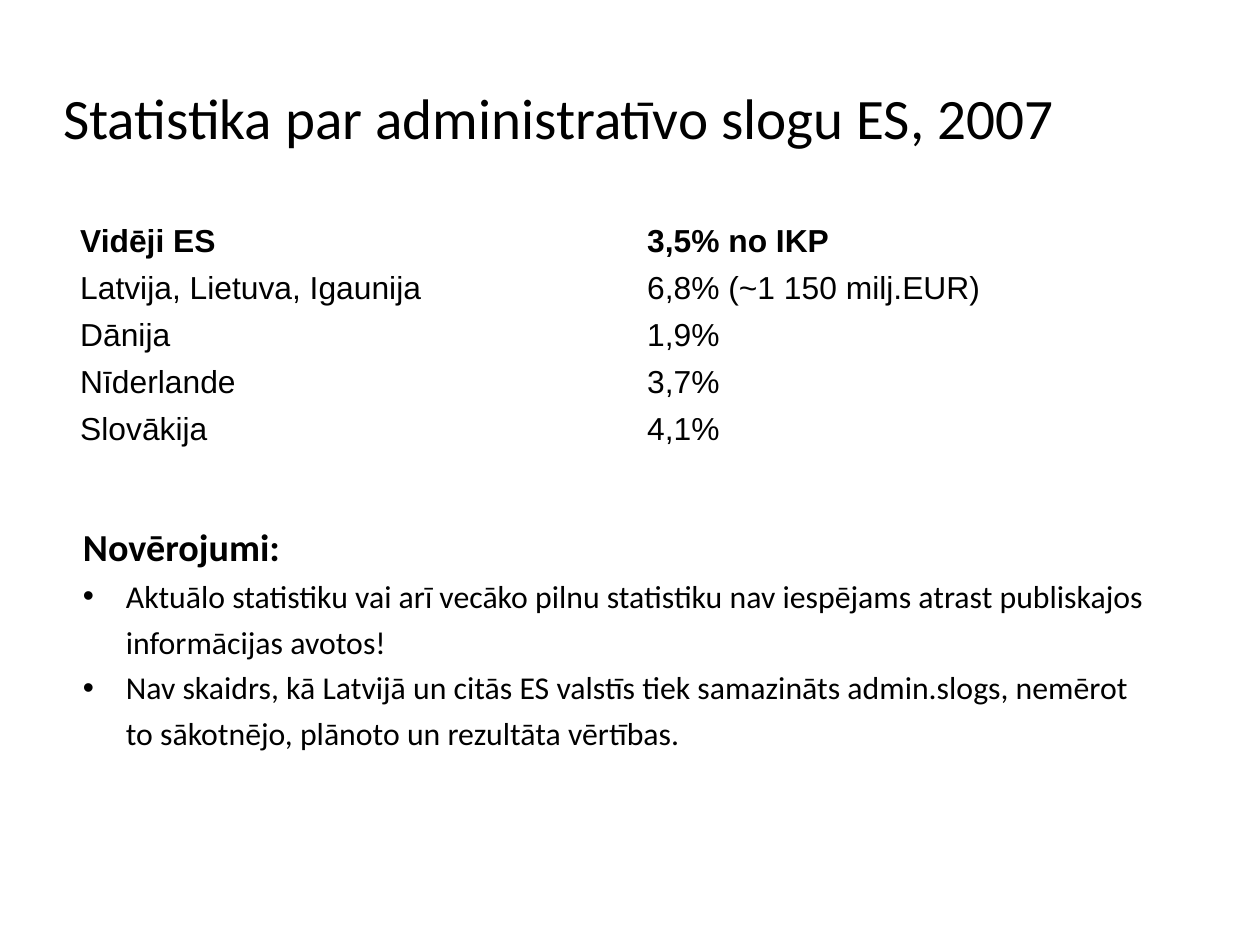
from lxml.etree import SubElement
from pptx import Presentation
from pptx.dml.color import RGBColor
from pptx.enum.text import MSO_ANCHOR, MSO_AUTO_SIZE, PP_ALIGN
from pptx.oxml.ns import qn
from pptx.util import Pt

BLACK = RGBColor(0, 0, 0)
WHITE = RGBColor(255, 255, 255)

TITLE = "Statistika par administratīvo slogu ES, 2007"
BURDEN_ROWS = [
    ("Vidēji ES", "3,5% no IKP"),
    ("Latvija, Lietuva, Igaunija", "6,8% (~1 150 milj.EUR)"),
    ("Dānija", "1,9%"),
    ("Nīderlande", "3,7%"),
    ("Slovākija", "4,1%"),
    ("", ""),
]
HEADING = "Novērojumi:"
OBSERVATIONS = [
    "Aktuālo statistiku vai arī vecāko pilnu statistiku nav iespējams atrast "
    "publiskajos informācijas avotos!",
    "Nav skaidrs, kā Latvijā un citās ES valstīs tiek samazināts admin.slogs, "
    "nemērot to sākotnējo, plānoto un rezultāta vērtības.",
]


def set_attributes(target, values):
    for name, value in values.items():
        setattr(target, name, value)


def format_paragraph(paragraph, font_name, size, line_spacing, bold=False):
    set_attributes(paragraph, {
        "alignment": PP_ALIGN.LEFT, "line_spacing": line_spacing,
        "space_before": Pt(0), "space_after": Pt(0),
    })
    set_attributes(paragraph.font, {"name": font_name, "size": Pt(size), "bold": bold})
    paragraph.font.color.rgb = BLACK


def add_bullet(paragraph, indent):
    properties = paragraph._p.get_or_add_pPr()
    properties.set("marL", str(Pt(indent)))
    properties.set("indent", str(-Pt(indent)))
    color = SubElement(properties, qn("a:buClr"))
    SubElement(color, qn("a:srgbClr"), val=str(BLACK))
    SubElement(properties, qn("a:buFont"), typeface="Arial")
    SubElement(properties, qn("a:buChar"), char="•")


def add_cell_borders(cell, width):
    """Draw all four sides; borders must precede the cell's fill in the XML."""
    properties = cell._tc.get_or_add_tcPr()
    for side in ("a:lnL", "a:lnR", "a:lnT", "a:lnB"):
        line = SubElement(properties, qn(side), w=str(Pt(width)))
        fill = SubElement(line, qn("a:solidFill"))
        SubElement(fill, qn("a:srgbClr"), val=str(WHITE))


def place_title(slide, left, top, width, height):
    title = slide.shapes.title
    set_attributes(title, {
        "left": Pt(left), "top": Pt(top), "width": Pt(width), "height": Pt(height),
    })
    frame = title.text_frame
    set_attributes(frame, {
        "text": TITLE, "word_wrap": True, "auto_size": MSO_AUTO_SIZE.NONE,
        "vertical_anchor": MSO_ANCHOR.MIDDLE,
        "margin_left": 0, "margin_right": 0, "margin_top": 0, "margin_bottom": 0,
    })
    format_paragraph(frame.paragraphs[0], "Calibri", 36, 1.01)


def add_burden_table(slide, left, top, width, height):
    table = slide.shapes.add_table(
        len(BURDEN_ROWS), 2, Pt(left), Pt(top), Pt(width), Pt(height)).table
    set_attributes(table, {"first_row": False, "horz_banding": False})
    for row_index, values in enumerate(BURDEN_ROWS):
        for column_index, value in enumerate(values):
            cell = table.cell(row_index, column_index)
            set_attributes(cell, {
                "text": value, "margin_left": Pt(10.8), "margin_right": Pt(10.8),
                "margin_top": Pt(3.6), "margin_bottom": Pt(3.6),
            })
            add_cell_borders(cell, 1)
            cell.fill.solid()
            cell.fill.fore_color.rgb = WHITE
            format_paragraph(cell.text_frame.paragraphs[0], "Arial", 20, 0.93,
                             bold=row_index == 0)


def add_observations(slide, left, top, width, height):
    box = slide.shapes.add_textbox(Pt(left), Pt(top), Pt(width), Pt(height))
    frame = box.text_frame
    set_attributes(frame, {"word_wrap": True, "auto_size": MSO_AUTO_SIZE.SHAPE_TO_FIT_TEXT})
    heading = frame.paragraphs[0]
    heading.text = HEADING
    format_paragraph(heading, "Calibri", 24, 1.2, bold=True)
    for observation in OBSERVATIONS:
        paragraph = frame.add_paragraph()
        paragraph.text = observation
        add_bullet(paragraph, 27)
        format_paragraph(paragraph, "Calibri", 20, 1.2)


def main():
    presentation = Presentation()
    set_attributes(presentation, {"slide_width": Pt(793.7), "slide_height": Pt(595.3)})
    slide = presentation.slides.add_slide(presentation.slide_layouts[5])
    slide.background.fill.solid()
    slide.background.fill.fore_color.rgb = WHITE
    place_title(slide, 39.7, 23.7, 714.3, 99.4)
    add_burden_table(slide, 39.7, 139, 714.3, 177.6)
    add_observations(slide, 45.2, 320.4, 692, 157.7)
    presentation.save("out.pptx")


if __name__ == "__main__":
    main()
